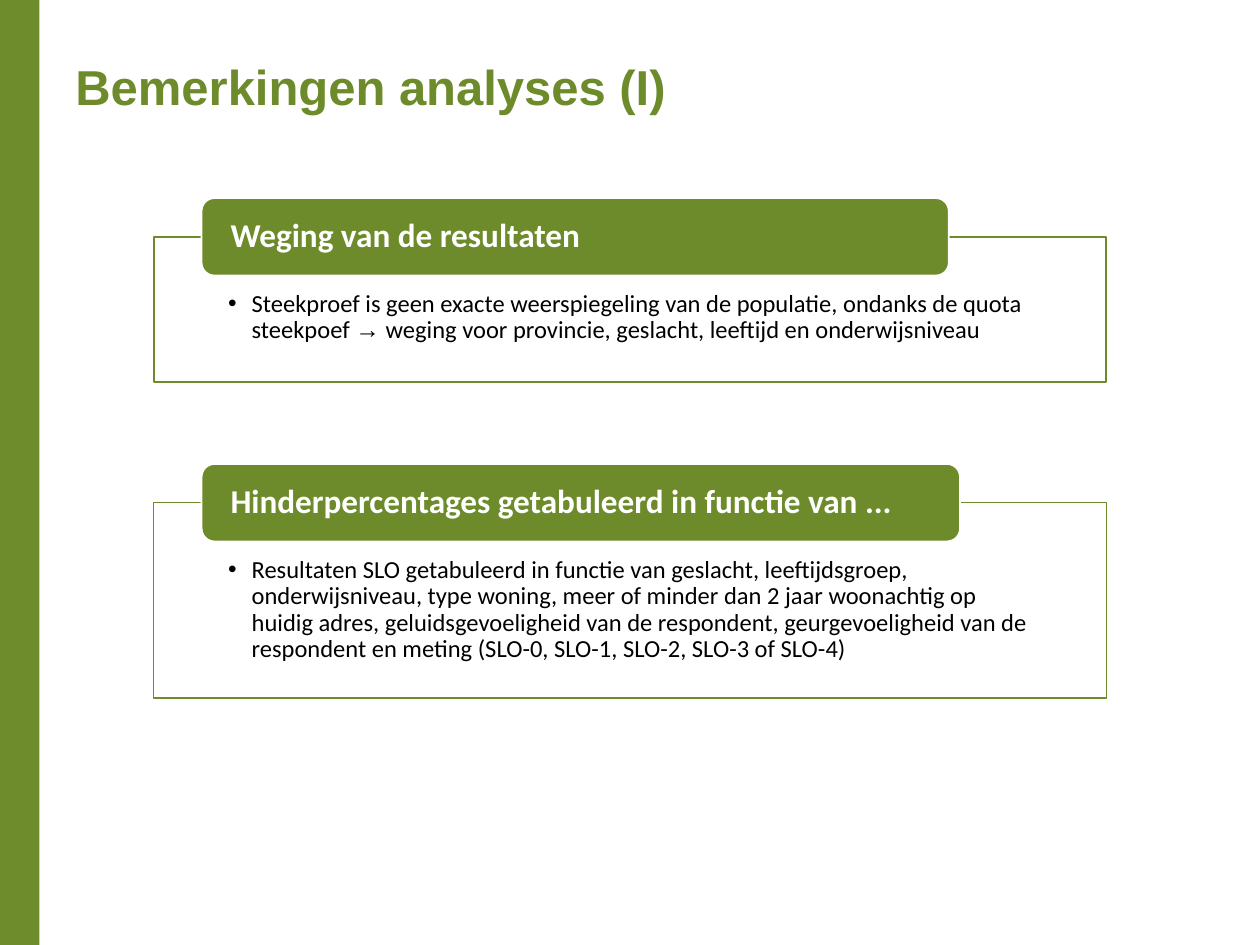
from lxml import etree
from pptx import Presentation
from pptx.dml.color import RGBColor
from pptx.enum.shapes import MSO_SHAPE
from pptx.enum.text import MSO_ANCHOR, MSO_AUTO_SIZE, PP_ALIGN
from pptx.oxml.ns import qn
from pptx.util import Pt

RECT = MSO_SHAPE.RECTANGLE
ROUND = MSO_SHAPE.ROUNDED_RECTANGLE
TOP, MIDDLE = MSO_ANCHOR.TOP, MSO_ANCHOR.MIDDLE
FIT = MSO_AUTO_SIZE.SHAPE_TO_FIT_TEXT
LEFT = PP_ALIGN.LEFT

COLORS = {"bar": "6E8C2B", "green": "6D8B2B", "white": "FFFFFF", "black": "000000"}

PANELS = [
    {
        "top": 135.36, "height": 82.8, "width": 427, "fill": "white", "line": 1,
        "head": "Weging van de resultaten",
        "body": [
            ("Steekproef is geen exacte weerspiegeling van de populatie, "
             "ondanks de quota steekpoef ", "Calibri"),
            ("→", "Arial"),
            (" weging voor provincie, geslacht, leeftijd en onderwijsniveau", "Calibri"),
        ],
    },
    {
        "top": 287.28, "height": 111.6, "width": 433.4, "fill": None, "line": 0.75,
        "head": "Hinderpercentages getabuleerd in functie van ...",
        "body": [
            ("Resultaten SLO getabuleerd in functie van geslacht, leeftijdsgroep, "
             "onderwijsniveau, type woning, meer of minder dan 2 jaar woonachtig op "
             "huidig adres, geluidsgevoeligheid van de respondent, geurgevoeligheid "
             "van de respondent en meting (SLO-0, SLO-1, SLO-2, SLO-3 of SLO-4)", "Calibri"),
        ],
    },
]


class Deck:
    def __init__(self, width, height):
        self.file = Presentation()
        self.file.slide_width, self.file.slide_height = Pt(width), Pt(height)
        self.slide = self.file.slides.add_slide(self.file.slide_layouts[6])

    def color(self, name):
        return RGBColor.from_string(COLORS[name])

    def style(self, font, size, color, bold=False, face=None):
        font.size, font.bold = Pt(size), bold
        font.color.rgb = self.color(color)
        if face:
            font.name = face

    def shape(self, kind, box, fill=None, line=None, weight=1):
        shape = self.slide.shapes.add_shape(kind, *map(Pt, box))
        shape.shadow.inherit = False
        if fill:
            shape.fill.solid()
            shape.fill.fore_color.rgb = self.color(fill)
        else:
            shape.fill.background()
        if line:
            shape.line.color.rgb = self.color(line)
            shape.line.width = Pt(weight)
        else:
            shape.line.fill.background()
        return shape

    def frame(self, shape, anchor, sides, top=0, bottom=0):
        frame = shape.text_frame
        frame.word_wrap = True
        frame.vertical_anchor = anchor
        frame.margin_left = frame.margin_right = Pt(sides)
        frame.margin_top, frame.margin_bottom = Pt(top), Pt(bottom)
        para = frame.paragraphs[0]
        para.alignment = LEFT
        para.line_spacing = 0.9
        return para

    def title(self, text, box):
        frame = self.slide.shapes.add_textbox(*map(Pt, box)).text_frame
        frame.word_wrap = False
        frame.auto_size = FIT
        para = frame.paragraphs[0]
        para.text = text
        self.style(para.font, 28, "green", True, "Arial")

    def body(self, panel):
        box = (87.84, panel["top"], 544.32, panel["height"])
        shape = self.shape(RECT, box, panel["fill"], "green", panel["line"])
        para = self.frame(shape, TOP, 42.5, 31, 10.8)
        para.level = 1
        props = para._p.get_or_add_pPr()
        props.set("marL", str(Pt(13.5)))
        props.set("indent", str(-Pt(13.5)))
        etree.SubElement(props, qn("a:buFont")).set("typeface", "Arial")
        etree.SubElement(props, qn("a:buChar")).set("char", "•")
        self.style(para.font, 14, "black")
        for text, face in panel["body"]:
            run = para.add_run()
            run.text = text
            run.font.name = face

    def head(self, panel):
        box = (115.2, panel["top"] - 22.14, panel["width"], 44.28)
        shape = self.shape(ROUND, box, "green", "white")
        para = self.frame(shape, MIDDLE, 14.4)
        para.text = panel["head"]
        self.style(para.font, 19, "white", True, "Calibri")


def main():
    deck = Deck(720, 540)
    deck.shape(RECT, (0, 0, 22.5, 540), "bar")
    deck.title("Bemerkingen analyses (I)", (36, 28.8, 356.4, 41))
    for panel in PANELS:
        deck.body(panel)
        deck.head(panel)
    deck.file.save("out.pptx")


if __name__ == "__main__":
    main()
